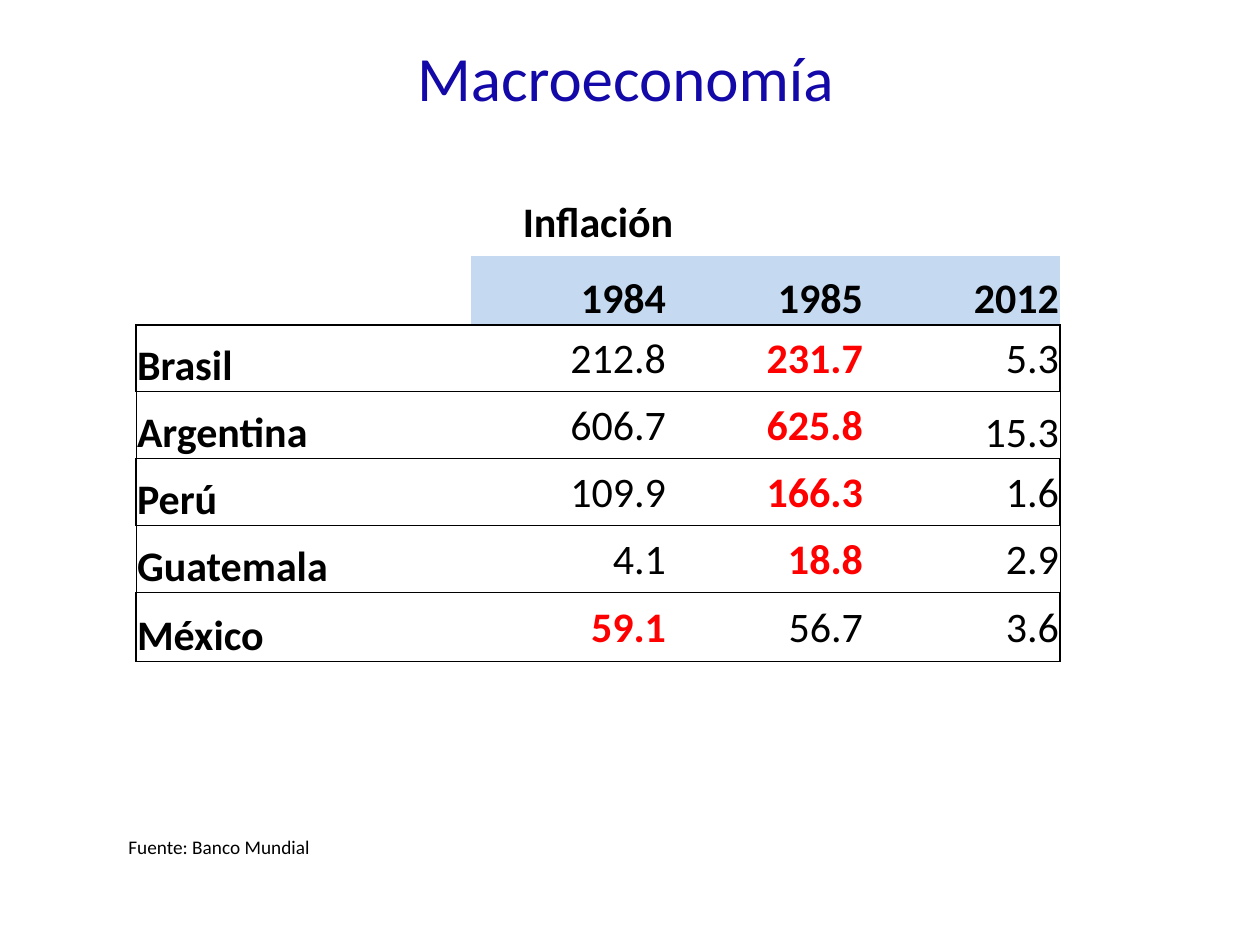
from lxml.etree import SubElement, Element
from pptx import Presentation
from pptx.dml.color import RGBColor
from pptx.enum.text import MSO_ANCHOR as Anchor, PP_ALIGN as Align
from pptx.oxml.ns import qn
from pptx.util import Pt

PX = 914400 // 126
BLACK, RED, NAVY, SKY = "000000", "FF0000", "1308A8", "C5D9F1"
COLUMNS = [335, 196, 197, 196]
ROWS = [67, 69, 67, 67, 67, 67, 69]
YEARS = ["1984", "1985", "2012"]
INFLATION = [
    ("Brasil", "212.8", "231.7", "5.3"),
    ("Argentina", "606.7", "625.8", "15.3"),
    ("Perú", "109.9", "166.3", "1.6"),
    ("Guatemala", "4.1", "18.8", "2.9"),
    ("México", "59.1", "56.7", "3.6"),
]


def px(length):
    return length * PX


def color(code):
    return RGBColor.from_string(code)


def apply(target, values):
    for name, value in values.items():
        setattr(target, name, value)


def write(frame, text, size, ink=BLACK, bold=False, align=Align.LEFT):
    para = frame.paragraphs[0]
    para.alignment = align
    span = para.add_run()
    span.text = text
    apply(span.font, {"name": "Calibri", "size": Pt(size), "bold": bold})
    span.font.color.rgb = color(ink)


def place(box, left, top, width, height):
    apply(box, {"left": px(left), "top": px(top),
                "width": px(width), "height": px(height)})


def add_borders(cell, widths):
    """Draw the sides named in widths (points) and clear the others."""
    properties = cell._tc.get_or_add_tcPr()
    for index, side in enumerate("LRTB"):
        line = Element(qn(f"a:ln{side}"))
        if side in widths:
            line.set("w", str(Pt(widths[side])))
            fill = SubElement(line, qn("a:solidFill"))
            SubElement(fill, qn("a:srgbClr"), val=BLACK)
        else:
            SubElement(line, qn("a:noFill"))
        properties.insert(index, line)


def format_cell(cell, borders, fill=None, anchor=Anchor.MIDDLE):
    apply(cell, {"margin_left": px(1), "margin_right": px(1), "margin_top": px(1),
                 "margin_bottom": 0, "vertical_anchor": anchor})
    if fill:
        cell.fill.solid()
        cell.fill.fore_color.rgb = color(fill)
    else:
        cell.fill.background()
    add_borders(cell, borders)


def add_title(page, text):
    title = page.shapes.title
    place(title, 32, 32, 1187, 158)
    title.text_frame.vertical_anchor = Anchor.TOP
    write(title.text_frame, text, 36, NAVY, align=Align.CENTER)


def add_inflation_table(page):
    table = page.shapes.add_table(
        len(ROWS), len(COLUMNS), px(136), px(189), px(sum(COLUMNS)), px(sum(ROWS))).table
    apply(table, {"first_row": False, "horz_banding": False})
    for column, width in zip(table.columns, COLUMNS):
        column.width = px(width)
    for row, height in zip(table.rows, ROWS):
        row.height = px(height)

    # Heading across all columns
    heading = table.cell(0, 0)
    heading.merge(table.cell(0, len(COLUMNS) - 1))
    for cell in table.rows[0].cells:
        format_cell(cell, {})
    write(heading.text_frame, "Inflación", 24, bold=True, align=Align.CENTER)

    # Years
    format_cell(table.cell(1, 0), {"B": 1})
    for column, year in enumerate(YEARS, 1):
        cell = table.cell(1, column)
        format_cell(cell, {"B": 1}, SKY, Anchor.BOTTOM)
        write(cell.text_frame, year, 24, bold=True, align=Align.RIGHT)

    # Countries, with the higher value of 1984 and 1985 in red
    last = len(INFLATION) - 1
    for index, record in enumerate(INFLATION):
        peak = max(record[1:3], key=float)
        side = 0.5 if index % 2 else 1
        for column, text in enumerate(record):
            borders = {"T": 1 if index == 0 else 0.5, "B": 1 if index == last else 0.5}
            if column == 0:
                borders["L"] = side
            elif column == len(YEARS):
                borders["R"] = side
            low = column == 0 or text == "15.3"
            cell = table.cell(index + 2, column)
            format_cell(cell, borders, anchor=Anchor.BOTTOM if low else Anchor.MIDDLE)
            write(cell.text_frame, text, 24, RED if text == peak else BLACK,
                  column == 0 or text == peak, Align.RIGHT if column else Align.LEFT)


def add_source(page, text):
    box = page.shapes.add_textbox(px(116), px(829), px(630), px(36))
    box.text_frame.word_wrap = True
    write(box.text_frame, text, 11)


def main():
    deck = Presentation()
    apply(deck, {"slide_width": px(1260), "slide_height": px(945)})
    page = deck.slides.add_slide(deck.slide_layouts[5])
    add_inflation_table(page)
    add_title(page, "Macroeconomía")
    add_source(page, "Fuente: Banco Mundial")
    deck.save("out.pptx")


if __name__ == "__main__":
    main()
